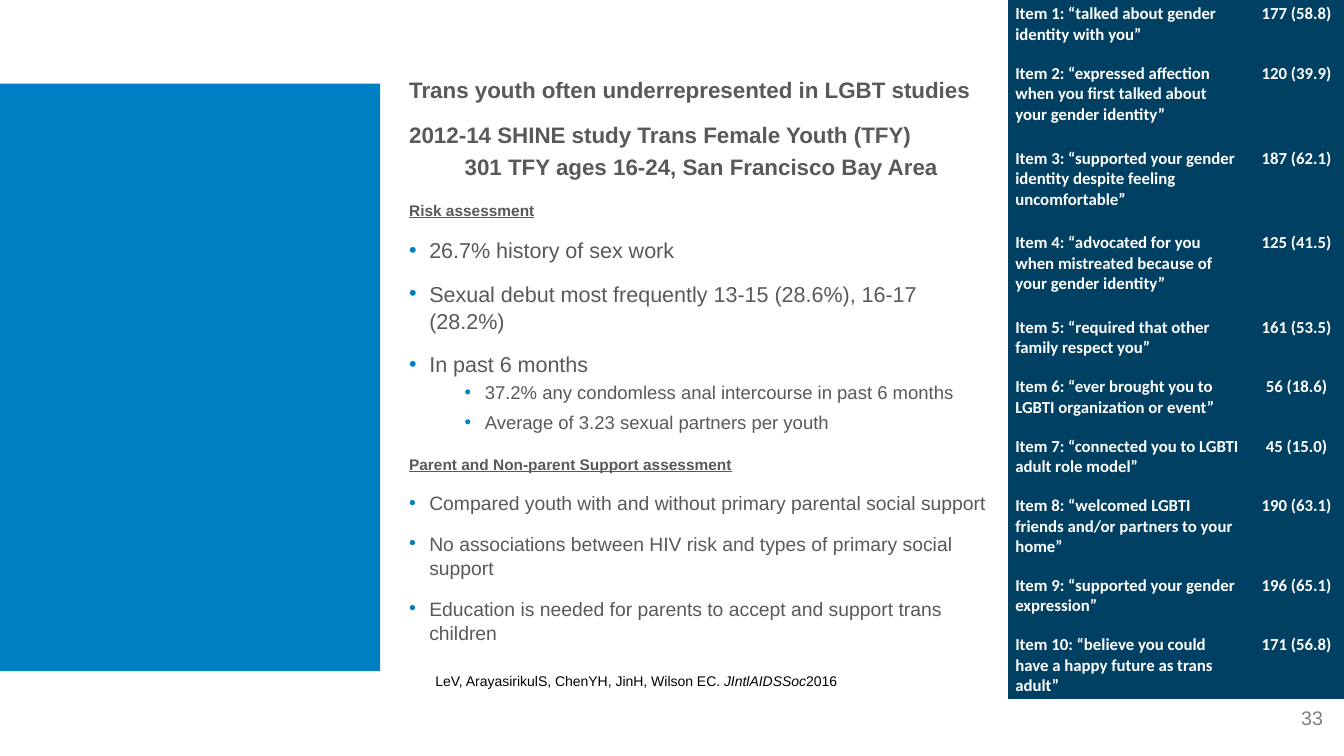
from lxml import etree
from pptx import Presentation
from pptx.dml.color import RGBColor
from pptx.enum.shapes import MSO_SHAPE
from pptx.enum.text import MSO_ANCHOR, PP_ALIGN
from pptx.oxml.ns import qn
from pptx.util import Inches, Pt

RECTANGLE = MSO_SHAPE.RECTANGLE
TOP = MSO_ANCHOR.TOP
LEFT, CENTER, RIGHT = PP_ALIGN.LEFT, PP_ALIGN.CENTER, PP_ALIGN.RIGHT

# (style, text)
FINDINGS = [
    ("heading", "Trans youth often underrepresented in LGBT studies"),
    ("heading", "2012-14 SHINE study Trans Female Youth (TFY)"),
    ("subheading", "301 TFY ages 16-24, San Francisco Bay Area"),
    ("section", "Risk assessment"),
    ("bullet", "26.7% history of sex work"),
    ("bullet", "Sexual debut most frequently 13-15 (28.6%), 16-17 (28.2%)"),
    ("bullet", "In past 6 months"),
    ("subbullet", "37.2% any condomless anal intercourse in past 6 months"),
    ("subbullet", "Average of 3.23 sexual partners per youth"),
    ("section", "Parent and Non-parent Support assessment"),
    ("small_bullet", "Compared youth with and without primary parental social support"),
    ("small_bullet", "No associations between HIV risk and types of primary social support"),
    ("small_bullet", "Education is needed for parents to accept and support trans children"),
]
# (quoted statement, count and percentage, row height)
SUPPORT_ITEMS = [
    ("talked about gender identity with you", "177 (58.8)", 0.59),
    ("expressed affection when you first talked about your gender identity", "120 (39.9)", 0.84),
    ("supported your gender identity despite feeling uncomfortable", "187 (62.1)", 0.84),
    ("advocated for you when mistreated because of your gender identity", "125 (41.5)", 0.84),
    ("required that other family respect you", "161 (53.5)", 0.59),
    ("ever brought you to LGBTI organization or event", "56 (18.6)", 0.59),
    ("connected you to LGBTI adult role model", "45 (15.0)", 0.59),
    ("welcomed LGBTI friends and/or partners to your home", "190 (63.1)", 0.79),
    ("supported your gender expression", "196 (65.1)", 0.59),
    ("believe you could have a happy future as trans adult", "171 (56.8)", 0.66),
]
CITATION = [
    ("LeV, ArayasirikulS, ChenYH, JinH, Wilson EC. ", False),
    ("JIntlAIDSSoc", True),
    ("2016", False),
]
PAGE_NUMBER = "33"
COLUMN_WIDTHS = [2.39, 0.94]

THEME = {
    "blue": RGBColor.from_string("007FC4"),
    "navy": RGBColor.from_string("004062"),
    "text": RGBColor.from_string("595959"),
    "gray": RGBColor.from_string("808080"),
    "white": RGBColor.from_string("FFFFFF"),
    "black": RGBColor.from_string("000000"),
    "body_font": "Arial",
    "table_font": "Calibri",
    "table_size": 12,
    "citation_size": 10,
    "number_size": 14,
    "line_spacing": 1.04,
    "plain_table": "{2D5ABB26-0587-4C30-8999-92F81FD0307C}",
}
BULLETED = {"bold": False, "bullet": True, "hang": 0.2}
WIDE = {"before": 12, "after": 0}
TIGHT = {"before": 2.5, "after": 2.5, "level": 1}
STYLES = {
    "heading": {"size": 16, "bold": True, **WIDE},
    "subheading": {"size": 16, "bold": True, "margin": 0.55, **TIGHT},
    "section": {"size": 11, "bold": True, "underline": True, **WIDE},
    "bullet": {"size": 15.4, "margin": 0.2, **BULLETED, **WIDE},
    "subbullet": {"size": 13.2, "margin": 0.75, **BULLETED, **TIGHT},
    "small_bullet": {"size": 13.8, "margin": 0.2, **BULLETED, **WIDE},
}


def set_font(font, color, size, name=THEME["body_font"], **values):
    font.color.rgb = color
    for attribute, value in {"size": Pt(size), "name": name, **values}.items():
        setattr(font, attribute, value)


def add_text_box(slide, left, top, width, height):
    frame = slide.shapes.add_textbox(*map(Inches, (left, top, width, height))).text_frame
    frame.word_wrap = True
    frame.vertical_anchor = TOP
    return frame


def format_indent(paragraph, style):
    properties = paragraph._p.get_or_add_pPr()
    properties.set("marL", str(Inches(style.get("margin", 0))))
    properties.set("indent", str(-Inches(style.get("hang", 0))))
    if style.get("bullet"):
        color = etree.SubElement(properties, qn("a:buClr"))
        etree.SubElement(color, qn("a:srgbClr"), val=str(THEME["blue"]))
        etree.SubElement(properties, qn("a:buFont"), typeface=THEME["body_font"])
        etree.SubElement(properties, qn("a:buChar"), char="•")


def add_findings(slide):
    frame = add_text_box(slide, 3.96, 0.7, 6, 5.72)
    for index, (style_name, text) in enumerate(FINDINGS):
        style = STYLES[style_name]
        paragraph = frame.add_paragraph() if index else frame.paragraphs[0]
        format_indent(paragraph, style)
        spacing = {
            "level": style.get("level", 0),
            "line_spacing": THEME["line_spacing"],
            "space_before": Pt(style["before"] if index else 0),
            "space_after": Pt(style["after"]),
        }
        for attribute, value in spacing.items():
            setattr(paragraph, attribute, value)
        run = paragraph.add_run()
        run.text = text
        set_font(run.font, THEME["text"], style["size"], bold=style["bold"],
                 underline=style.get("underline", False))


def add_support_table(slide):
    heights = [height for _, _, height in SUPPORT_ITEMS]
    frame = slide.shapes.add_table(
        len(SUPPORT_ITEMS), len(COLUMN_WIDTHS), Inches(10), Inches(0),
        Inches(sum(COLUMN_WIDTHS)), Inches(sum(heights)))
    table = frame.table
    table.first_row = table.horz_banding = False
    table._tbl.tblPr.find(qn("a:tableStyleId")).text = THEME["plain_table"]
    for column, width in zip(table.columns, COLUMN_WIDTHS):
        column.width = Inches(width)
    margins = {"margin_left": 0.07, "margin_top": 0.04,
               "margin_right": 0.07, "margin_bottom": 0.04}
    for number, (row, item) in enumerate(zip(table.rows, SUPPORT_ITEMS), 1):
        statement, result, height = item
        row.height = Inches(height)
        texts = [f"Item {number}: “{statement}”", result]
        for cell, text, alignment in zip(row.cells, texts, (LEFT, CENTER)):
            cell.fill.solid()
            cell.fill.fore_color.rgb = THEME["navy"]
            for attribute, value in margins.items():
                setattr(cell, attribute, Inches(value))
            paragraph = cell.text_frame.paragraphs[0]
            paragraph.alignment = alignment
            run = paragraph.add_run()
            run.text = text
            set_font(run.font, THEME["white"], THEME["table_size"],
                     THEME["table_font"], bold=True)


def main():
    presentation = Presentation()
    presentation.slide_width = Inches(13.33)
    presentation.slide_height = Inches(7.5)
    slide = presentation.slides.add_slide(presentation.slide_layouts[6])

    panel = slide.shapes.add_shape(
        RECTANGLE, Inches(0), Inches(0.83), Inches(3.77), Inches(5.83))
    panel.shadow.inherit = False
    panel.fill.solid()
    panel.fill.fore_color.rgb = THEME["blue"]
    panel.line.fill.background()

    citation = add_text_box(slide, 4.22, 6.62, 5, 0.27).paragraphs[0]
    for text, italic in CITATION:
        run = citation.add_run()
        run.text = text
        set_font(run.font, THEME["black"], THEME["citation_size"], italic=italic)

    page_number = add_text_box(slide, 9.42, 6.95, 3.8, 0.4).paragraphs[0]
    page_number.alignment = RIGHT
    run = page_number.add_run()
    run.text = PAGE_NUMBER
    set_font(run.font, THEME["gray"], THEME["number_size"])

    add_findings(slide)
    add_support_table(slide)
    presentation.save("out.pptx")


if __name__ == "__main__":
    main()
